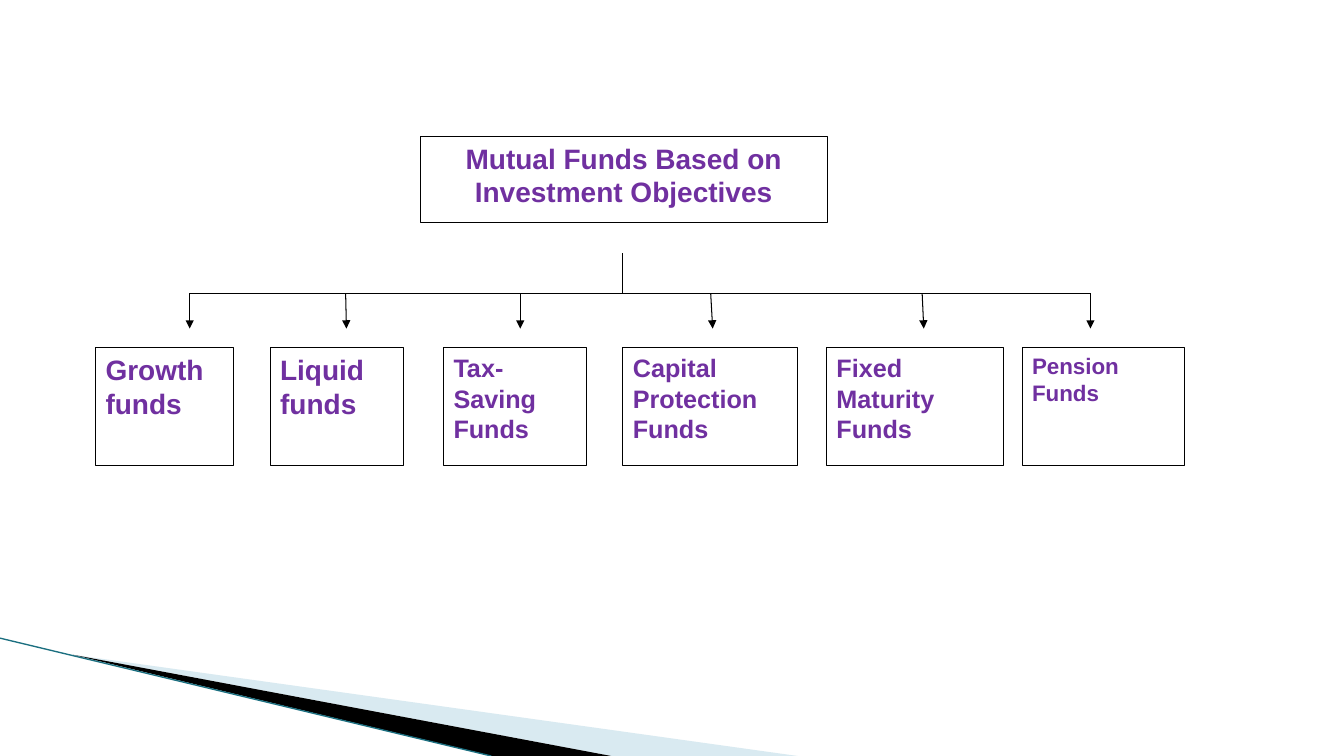
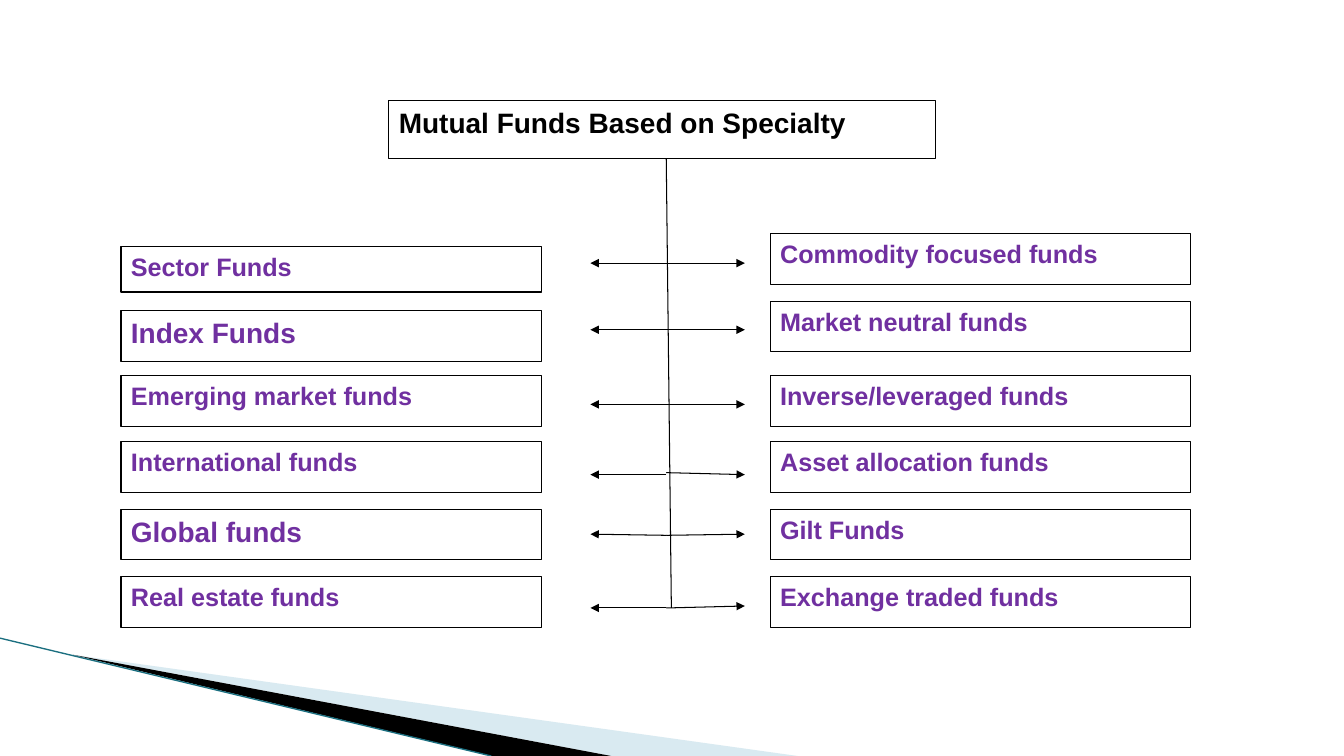
import pptx
import pptx.dml.color
import pptx.enum.shapes
import pptx.enum.text
import pptx.oxml
import pptx.oxml.ns
import pptx.util
from lxml import etree

Cm = pptx.util.Cm
FONT = "Arial"
COLORS = {
    "purple": "7030A0",
    "black": "000000",
    "white": "FFFFFF",
    "pale_blue": "A0CBDC",
    "teal": "1B6F80",
}
SLIDE_WIDTH, SLIDE_HEIGHT = 33.87, 19.05

OBJECTIVES = [
    ("Growth funds", 20, 0, 3.48, 2.37, 2.37),
    ("Liquid funds", 20, 4.4, 3.35, 6.3, 6.32),
    ("Tax-Saving Funds", 18, 8.77, 3.61, 10.7, 10.7),
    ("Capital Protection Funds", 18, 13.29, 4.39, 15.5, 15.55),
    ("Fixed Maturity Funds", 18, 18.42, 4.45, 20.83, 20.87),
    ("Pension Funds", 16, 23.35, 4.09, 25.07, 25.07),
]
SPECIALTIES_LEFT = [
    ("Sector Funds", 18, 3.68, 1.14),
    ("Index Funds", 20, 5.28, 1.28),
    ("Emerging market funds", 18, 6.93, 1.28),
    ("International funds", 18, 8.59, 1.28),
    ("Global funds", 20, 10.29, 1.28),
    ("Real estate funds", 18, 11.99, 1.28),
]
SPECIALTIES_RIGHT = [
    ("Commodity focused funds", 18, 3.35, 1.28),
    ("Market neutral funds", 18, 5.05, 1.28),
    ("Inverse/leveraged funds", 18, 6.93, 1.28),
    ("Asset allocation funds", 18, 8.59, 1.28),
    ("Gilt Funds", 18, 10.29, 1.28),
    ("Exchange traded funds", 18, 11.99, 1.28),
]
BRANCHES = [
    (4.09, 4.09, 4.09, 4.09),
    (5.77, 5.77, 5.77, 5.77),
    (7.65, 7.65, 7.65, 7.65),
    (9.42, 9.42, 9.37, 9.42),
    (10.95, 10.92, 10.95, 10.92),
    (12.78, 12.78, 12.78, 12.73),
]


def rgb(name):
    """Return the palette colour with this name."""
    return pptx.dml.color.RGBColor.from_string(COLORS[name])


def write(frame, text, size=18, color="purple", bold=True, align="LEFT"):
    """Write one formatted paragraph into a text frame."""
    frame.word_wrap = True
    frame.vertical_anchor = pptx.enum.text.MSO_ANCHOR.TOP
    paragraph = frame.paragraphs[0]
    paragraph.alignment = getattr(pptx.enum.text.PP_ALIGN, align)
    run = paragraph.add_run()
    run.text = text
    run.font.name = FONT
    run.font.size = pptx.util.Pt(size)
    run.font.bold = bold
    run.font.color.rgb = rgb(color)


def add_box(slide, left, top, width, height, text, **text_format):
    """Add a white outlined box with text."""
    box = slide.shapes.add_shape(
        pptx.enum.shapes.MSO_SHAPE.RECTANGLE,
        Cm(left), Cm(top), Cm(width), Cm(height))
    box.shadow.inherit = False
    box.fill.solid()
    box.fill.fore_color.rgb = rgb("white")
    box.line.color.rgb = rgb("black")
    box.line.width = pptx.util.Pt(0.75)
    write(box.text_frame, text, **text_format)


def add_line(slide, start, end, color="black", weight=0.75, arrow=False):
    """Add a straight line, with an arrowhead at its end if asked."""
    line = slide.shapes.add_connector(
        pptx.enum.shapes.MSO_CONNECTOR.STRAIGHT,
        Cm(start[0]), Cm(start[1]), Cm(end[0]), Cm(end[1]))
    line.line.color.rgb = rgb(color)
    line.line.width = pptx.util.Pt(weight)
    if arrow:
        outline = line.line._get_or_add_ln()
        etree.SubElement(outline, pptx.oxml.ns.qn("a:tailEnd"), type="triangle")
    etree.SubElement(line._element.spPr, pptx.oxml.ns.qn("a:effectLst"))


def add_wedge(slide, points, color, opacity=100):
    """Add a filled outline through the given points."""
    corners = [(Cm(x), Cm(y)) for x, y in points]
    builder = slide.shapes.build_freeform(*corners[0], scale=1.0)
    builder.add_line_segments(corners[1:], close=True)
    wedge = builder.convert_to_shape()
    wedge.shadow.inherit = False
    wedge.fill.solid()
    wedge.fill.fore_color.rgb = rgb(color)
    wedge.line.fill.background()
    if opacity < 100:
        tint = wedge._element.spPr.find(".//" + pptx.oxml.ns.qn("a:srgbClr"))
        etree.SubElement(tint, pptx.oxml.ns.qn("a:alpha"), val=str(opacity * 1000))


def add_corner_band(slide, bottom):
    """Draw the corner band that ends at the bottom edge."""
    tip = (1.84, bottom - 2.55)
    add_wedge(slide, [tip, (20.1, bottom), (15.4, bottom)], "pale_blue", opacity=40)
    add_wedge(slide, [tip, (15.4, bottom), (12.4, bottom)], "black")
    add_line(slide, (0, bottom - 2.97), (12.38, bottom), color="teal", weight=0.95)


def add_objective_tree(slide, left, top, height):
    """Draw the tree of funds by investment objective."""
    box_height = 2.97
    rail, arrow_end, stem = top + 3.96, top + 4.85, left + 13.27
    add_box(slide, left + 8.18, top, 10.26, 2.18,
            "Mutual Funds Based on Investment Objectives", size=20, align="CENTER")
    add_line(slide, (stem, top + 2.95), (stem, rail))
    add_line(slide, (left + OBJECTIVES[0][4], rail), (left + OBJECTIVES[-1][4], rail))
    for fund, size, offset, width, arrow_x, tip_x in OBJECTIVES:
        add_box(slide, left + offset, top + height - box_height, width, box_height,
                fund, size=size)
        add_line(slide, (left + arrow_x, rail), (left + tip_x, arrow_end), arrow=True)


def add_specialty_tree(slide, left, top, width):
    """Draw the two columns of funds by specialty around a trunk."""
    column_width, trunk = 10.59, left + 13.74
    add_box(slide, left + 6.75, top, 13.77, 1.45,
            "Mutual Funds Based on Specialty", size=20, color="black")
    columns = [(left, SPECIALTIES_LEFT),
               (left + width - column_width, SPECIALTIES_RIGHT)]
    for column_left, funds in columns:
        for fund, size, offset, height in funds:
            add_box(slide, column_left, top + offset, column_width, height,
                    fund, size=size)
    add_line(slide, (trunk, top + 1.45), (trunk + 0.13, top + 12.78))
    for left_start, left_end, right_start, right_end in BRANCHES:
        add_line(slide, (trunk, top + left_start),
                 (left + 11.83, top + left_end), arrow=True)
        add_line(slide, (trunk, top + right_start),
                 (left + 15.72, top + right_end), arrow=True)


def add_slide(deck):
    """Add a blank slide with the shared corner band."""
    slide = deck.slides.add_slide(deck.slide_layouts[6])
    add_corner_band(slide, SLIDE_HEIGHT)
    return slide


def main():
    """Build and save the deck."""
    deck = pptx.Presentation()
    deck.slide_width, deck.slide_height = Cm(SLIDE_WIDTH), Cm(SLIDE_HEIGHT)
    add_objective_tree(add_slide(deck), left=2.41, top=3.43, height=8.3)
    add_specialty_tree(add_slide(deck), left=3.05, top=2.54, width=26.95)
    deck.save("out.pptx")


if __name__ == "__main__":
    main()
